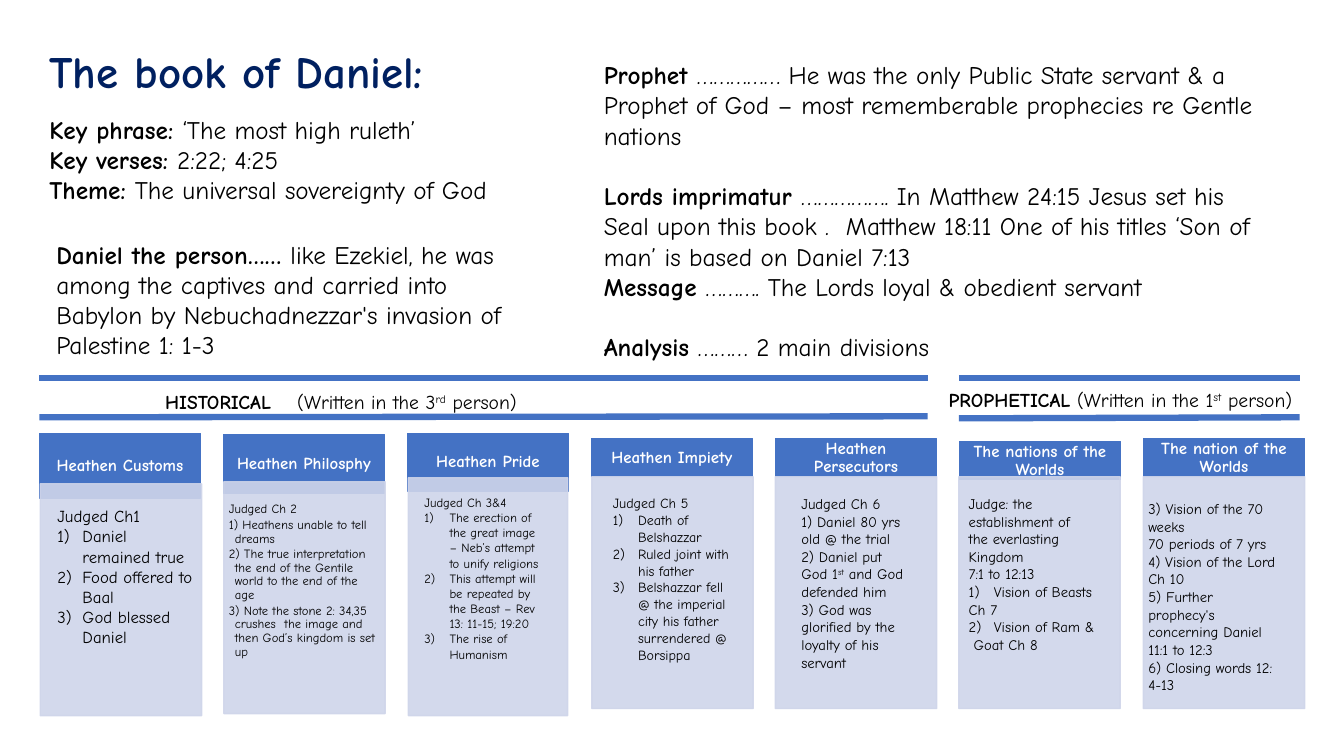
"""Builds the one-slide overview of the book of Daniel."""
from dataclasses import dataclass

from lxml import etree
from pptx import Presentation
from pptx import util as u
from pptx.dml.color import RGBColor
from pptx.enum import shapes, text
from pptx.oxml.ns import qn


@dataclass(frozen=True)
class Theme:
    font: str = "Comic Neue"
    navy: RGBColor = RGBColor(0x00, 0x20, 0x60)
    blue: RGBColor = RGBColor(0x44, 0x72, 0xC4)
    pale: RGBColor = RGBColor(0xCF, 0xD5, 0xEA)
    black: RGBColor = RGBColor(0, 0, 0)
    white: RGBColor = RGBColor(255, 255, 255)
    title: float = 32
    lead: float = 18
    division: float = 14
    header: float = 12


theme = Theme()


def write(frame, lines, size, color=theme.black, align=text.PP_ALIGN.LEFT):
    """Writes lines, where *bold*, ^superscript^ and a leading # for numbering apply."""
    frame.word_wrap = True
    number, was_numbered = 0, False
    for index, line in enumerate(lines):
        paragraph = frame.paragraphs[0] if index == 0 else frame.add_paragraph()
        paragraph.alignment = align
        numbered = line.startswith("#")
        if numbered:
            number += 1
            props = paragraph._p.get_or_add_pPr()
            props.set("marL", str(u.Inches(0.25)))
            props.set("indent", str(-u.Inches(0.25)))
            font = etree.SubElement(props, qn("a:buFont"))
            font.set("typeface", theme.font)
            bullet = etree.SubElement(props, qn("a:buAutoNum"))
            bullet.set("type", "arabicParenR")
            if number > 1 and not was_numbered:
                bullet.set("startAt", str(number))
        was_numbered = numbered
        for b, part in enumerate(line.removeprefix("#").split("*")):
            for s, piece in enumerate(part.split("^")):
                if not piece:
                    continue
                run = paragraph.add_run()
                run.text = piece
                run.font.name = theme.font
                run.font.size = u.Pt(size)
                run.font.color.rgb = color
                run.font.bold = b % 2 == 1
                if s % 2:
                    run.font._element.set("baseline", "30000")


def add_text(left, top, width, height, lines, size):
    box = slide.shapes.add_textbox(*map(u.Inches, (left, top, width, height)))
    write(box.text_frame, lines, size)
    return box.text_frame


deck = Presentation()
deck.slide_width, deck.slide_height = u.Inches(13.33), u.Inches(7.5)
slide = deck.slides.add_slide(deck.slide_layouts[5])

title = slide.shapes.title
title.left, title.top, title.width, title.height = map(u.Inches, (0.39, 0.38, 4.55, 0.64))
title.text_frame.auto_size = text.MSO_AUTO_SIZE.NONE
title.text_frame.vertical_anchor = text.MSO_ANCHOR.TOP
write(title.text_frame, ["*The book of Daniel:*"], theme.title, theme.navy)

books = [
    ("Heathen Customs", 4.3, 0.64, (0.4, 4.8, 1.6, 2.3), (0.47, 4.97, 1.54, 1.72), 12,
     ["Judged Ch1", "#Daniel remained true", "#Food offered to Baal", "#God blessed Daniel"]),
    ("Heathen Philosphy", 4.31, 0.58, (2.22, 4.78, 1.6, 2.3), (2.22, 4.94, 1.6, 2.1), 9,
     ["Judged Ch 2", "1) Heathens unable to tell dreams",
      "2) The true interpretation the end of the Gentile world to the end of the age",
      "3) Note the stone 2: 34,35 crushes  the image and then God’s kingdom is set up"]),
    ("Heathen Pride", 4.3, 0.57, (4.05, 4.74, 1.58, 2.36), (4.11, 4.86, 1.35, 2.22), 9,
     ["Judged Ch 3&4", "#The erection of the great image – Neb’s attempt to unify religions",
      "#This attempt will be repeated by the Beast – Rev 13: 11-15; 19:20",
      "#The rise of Humanism"]),
    ("Heathen Impiety", 4.35, 0.38, (5.87, 4.73, 1.6, 2.3), (5.98, 4.86, 1.35, 2.12), 10,
     ["Judged Ch 5", "#Death of Belshazzar", "#Ruled joint with his father",
      "#Belshazzar fell @ the imperial city his father surrendered @ Borsippa"]),
    ("Heathen Persecutors", 4.35, 0.38, (7.69, 4.73, 1.6, 2.3), (7.85, 4.86, 1.26, 2.04), 10.5,
     ["Judged Ch 6", "1) Daniel 80 yrs old @ the trial",
      "2) Daniel put God 1^st^ and God defended him",
      "3) God was glorified by the loyalty of his servant"]),
    ("The nations of the Worlds", 4.38, 0.38, (9.51, 4.73, 1.6, 2.3), (9.51, 4.86, 1.66, 1.69), 10.5,
     ["Judge: the", "establishment of", "the everlasting", "Kingdom", "7:1 to 12:13",
      "#Vision of Beasts", "Ch 7", "#Vision of Ram &", " Goat Ch 8"]),
    ("The nation of the Worlds", 4.35, 0.38, (11.34, 4.73, 1.6, 2.3), (11.29, 4.91, 1.52, 2.04), 10.5,
     ["3) Vision of the 70 weeks", "70 periods of 7 yrs", "4) Vision of the Lord Ch 10",
      "5) Further prophecy's concerning Daniel 11:1 to 12:3", "6) Closing words 12: 4-13"]),
]
details = []
for column, (heading, top, height, panel_area, detail_area, size, lines) in enumerate(books):
    header_area = (0.39 + 1.825 * column, top, 1.6, height)
    for area, color in ((header_area, theme.blue), (panel_area, theme.pale)):
        block = slide.shapes.add_shape(shapes.MSO_SHAPE.RECTANGLE, *map(u.Inches, area))
        block.shadow.inherit = False
        block.fill.solid()
        block.fill.fore_color.rgb = color
        block.line.color.rgb = color
        block.line.width = u.Pt(1)
        if color == theme.blue:
            block.text_frame.vertical_anchor = text.MSO_ANCHOR.MIDDLE
            write(block.text_frame, [f"*{heading}*"], theme.header, theme.white, text.PP_ALIGN.CENTER)
            block.text_frame.paragraphs[0].line_spacing = 0.9
        else:
            for paint in block._element.spPr.iter(qn("a:srgbClr")):
                etree.SubElement(paint, qn("a:alpha")).set("val", "90000")
    details.append(add_text(*detail_area, lines, size))

philosophy = details[1]
philosophy.margin_left, philosophy.margin_right = u.Inches(0.05), u.Inches(0.07)
for paragraph in philosophy.paragraphs:
    paragraph.line_spacing = 0.9
    paragraph.space_after = u.Pt(1.35)
    hanging = paragraph._p.get_or_add_pPr()
    hanging.set("marL", str(u.Inches(0.06)))
    hanging.set("indent", str(-u.Inches(0.06)))

for start, end, y_start, y_end in ((0.39, 9.2, 3.75, 3.75), (0.39, 9.2, 4.14, 4.13),
                                   (9.51, 12.89, 3.75, 3.75), (9.51, 12.89, 4.15, 4.14)):
    rule = slide.shapes.add_connector(
        shapes.MSO_CONNECTOR.STRAIGHT, *map(u.Inches, (start, y_start, end, y_end)))
    rule.line.color.rgb = theme.blue
    rule.line.width = u.Pt(4.5)
    etree.SubElement(rule._element.spPr, qn("a:effectLst"))

historical = add_text(1.54, 3.82, 5.46, 0.34,
                      ["*HISTORICAL*\t(Written in the 3^rd^ person)"], theme.division)
tabs = etree.SubElement(historical.paragraphs[0]._p.get_or_add_pPr(), qn("a:tabLst"))
etree.SubElement(tabs, qn("a:tab"), pos=str(u.Inches(1.31)), algn="l")
add_text(9.31, 3.8, 4.25, 0.34, ["*PROPHETICAL* (Written in the 1^st^ person)"], theme.division)

add_text(0.39, 1.08, 5.21, 1.01,
         ["*Key phrase: *‘The most high ruleth’", "*Key verses: *2:22; 4:25",
          "*Theme: *The universal sovereignty of God"], theme.lead)
add_text(0.46, 2.32, 4.71, 1.31,
         ["*Daniel the person…… *like Ezekiel, he was among the captives and carried into "
          "Babylon by Nebuchadnezzar's invasion of Palestine 1: 1-3"], theme.lead)
summary = add_text(5.89, 0.54, 7.13, 3.13, [
    "*Prophet *…………… He was the only Public State servant & a Prophet of God – "
    "most rememberable prophecies re Gentle nations",
    "*Lords imprimatur *……………. In Matthew 24:15 Jesus set his",
    "Seal upon this book .  Matthew 18:11 One of his titles ‘Son of man’ is based on Daniel 7:13",
    "*Message* ………. The Lords loyal & obedient servant",
    "*Analysis* ……… 2 main divisions"], theme.lead)
for section in (1, 4):
    summary.paragraphs[section].space_before = u.Pt(21.6)

deck.save("out.pptx")
